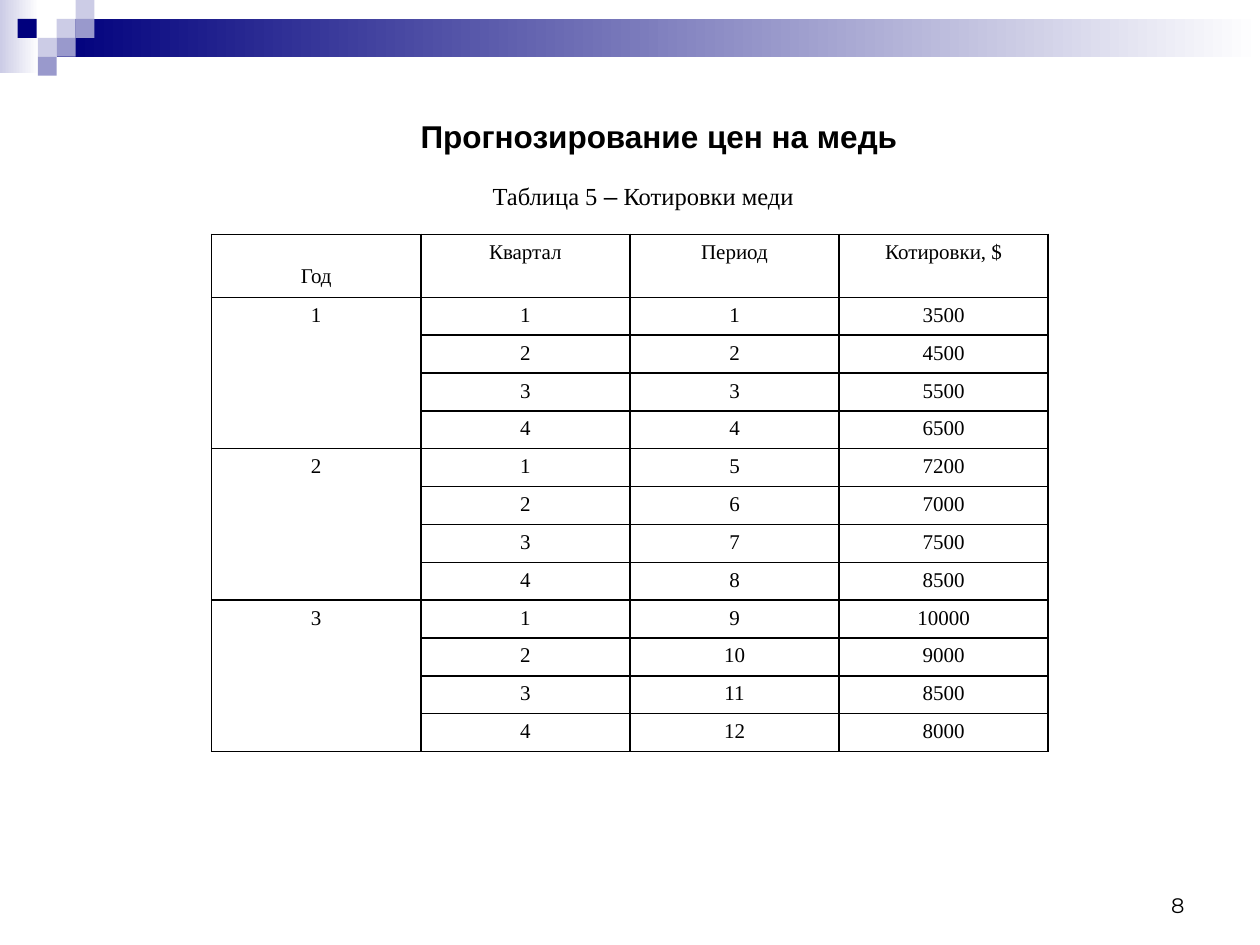
from dataclasses import dataclass

from lxml.etree import SubElement
from pptx import Presentation
from pptx.dml.color import RGBColor
from pptx.enum.shapes import MSO_SHAPE
from pptx.enum.text import MSO_ANCHOR, PP_ALIGN
from pptx.oxml.ns import qn
from pptx.util import Inches, Pt


@dataclass(frozen=True)
class Theme:
    navy: RGBColor = RGBColor(0x00, 0x00, 0x7D)
    violet: RGBColor = RGBColor(0x99, 0x99, 0xCC)
    lavender: RGBColor = RGBColor(0xCC, 0xCC, 0xE6)
    white: RGBColor = RGBColor(0xFF, 0xFF, 0xFF)
    black: RGBColor = RGBColor(0x00, 0x00, 0x00)
    sans: str = "Arial"
    serif: str = "Times New Roman"
    number: str = "Montserrat"
    title_size: Pt = Pt(18)
    caption_size: Pt = Pt(14)
    body_size: Pt = Pt(12)
    border: Pt = Pt(1)


class SlideBuilder:
    """Draws styled elements on the current slide."""

    def __init__(self, slide, theme):
        self.slide = slide
        self.theme = theme

    def rectangle(self, left, top, width, height, color, fade_to=None):
        box = [Inches(value) for value in (left, top, width, height)]
        shape = self.slide.shapes.add_shape(MSO_SHAPE.RECTANGLE, *box)
        shape.shadow.inherit = False
        shape.line.fill.background()
        if fade_to is None:
            shape.fill.solid()
            shape.fill.fore_color.rgb = color
        else:
            shape.fill.gradient()
            shape.fill.gradient_angle = 0
            for stop, stop_color in zip(shape.fill.gradient_stops, (color, fade_to)):
                stop.color.rgb = stop_color

    def style(self, paragraph, size, font, alignment=PP_ALIGN.CENTER, bold=False):
        paragraph.alignment = alignment
        paragraph.font.size = size
        paragraph.font.name = font
        paragraph.font.bold = bold
        paragraph.font.color.rgb = self.theme.black

    def text(self, box, runs, size, font, alignment=PP_ALIGN.CENTER,
             anchor=MSO_ANCHOR.TOP, bold=False, wrap=True):
        shape = self.slide.shapes.add_textbox(*[Inches(value) for value in box])
        frame = shape.text_frame
        frame.word_wrap = wrap
        frame.vertical_anchor = anchor
        paragraph = frame.paragraphs[0]
        self.style(paragraph, size, font, alignment, bold)
        for content, run_font in runs:
            run = paragraph.add_run()
            run.text = content
            if run_font != font:
                run.font.name = run_font

    def borders(self, cell):
        properties = cell._tc.get_or_add_tcPr()
        for side in ("a:lnL", "a:lnR", "a:lnT", "a:lnB"):
            line = SubElement(properties, qn(side), w=str(self.theme.border))
            fill = SubElement(line, qn("a:solidFill"))
            SubElement(fill, qn("a:srgbClr"), val=str(self.theme.black))

    def table(self, left, top, column_width, row_heights, rows):
        width, height = column_width * len(rows[0]), sum(row_heights)
        frame = self.slide.shapes.add_table(
            len(rows), len(rows[0]),
            Inches(left), Inches(top), Inches(width), Inches(height))
        table = frame.table
        table.first_row = table.horz_banding = False
        for column in table.columns:
            column.width = Inches(column_width)
        for row, row_height, values in zip(table.rows, row_heights, rows):
            row.height = Inches(row_height)
            for cell, value in zip(row.cells, values):
                cell.text = str(value)
                self.style(cell.text_frame.paragraphs[0],
                           self.theme.body_size, self.theme.serif)
                self.borders(cell)
                cell.fill.background()
        return table


def draw_header(builder):
    theme = builder.theme
    builder.rectangle(0, 0, 0.31, 0.58, theme.lavender, theme.white)
    builder.rectangle(0.45, 0.15, 9.55, 0.3, theme.navy, theme.white)
    side = 0.15
    squares = [
        (0.45, 0.15, theme.lavender), (0.6, 0, theme.lavender),
        (0.6, 0.15, theme.violet), (0.3, 0.3, theme.lavender),
        (0.14, 0.15, theme.navy), (0.45, 0.3, theme.violet),
        (0.3, 0.45, theme.violet),
    ]
    for left, top, color in squares:
        builder.rectangle(left, top, side, side, color)


def draw_quotes(builder):
    prices = [3500, 4500, 5500, 6500, 7200, 7000,
              7500, 8500, 10000, 9000, 8500, 8000]
    quarters = 4
    rows = [["Год", "Квартал", "Период", "Котировки, $"]]
    for index, price in enumerate(prices):
        year, quarter = divmod(index, quarters)
        rows.append(["" if quarter else year + 1, quarter + 1, index + 1, price])
    heights = [0.5] + [0.3] * len(prices)
    table = builder.table(1.68, 1.86, 1.66, heights, rows)
    table.cell(0, 0).margin_top = Inches(0.24)
    for first in range(1, len(rows), quarters):
        table.cell(first, 0).merge(table.cell(first + quarters - 1, 0))


def main():
    presentation = Presentation()
    presentation.slide_width = Inches(10)
    presentation.slide_height = Inches(7.5)
    slide = presentation.slides.add_slide(presentation.slide_layouts[6])
    theme = Theme()
    builder = SlideBuilder(slide, theme)
    draw_header(builder)
    builder.text((3.17, 0.88, 4.12, 0.4),
                 [("Прогнозирование цен на медь", theme.sans)],
                 theme.title_size, theme.sans, bold=True)
    builder.text((3.79, 1.39, 2.63, 0.33),
                 [("Таблица 5 ", theme.serif), ("–", theme.sans),
                  (" Котировки меди", theme.serif)],
                 theme.caption_size, theme.serif,
                 anchor=MSO_ANCHOR.MIDDLE, wrap=False)
    draw_quotes(builder)
    builder.text((7.17, 6.83, 2.33, 0.5), [("8", theme.number)],
                 theme.body_size, theme.number,
                 alignment=PP_ALIGN.RIGHT, anchor=MSO_ANCHOR.BOTTOM)
    presentation.save("out.pptx")


if __name__ == "__main__":
    main()
